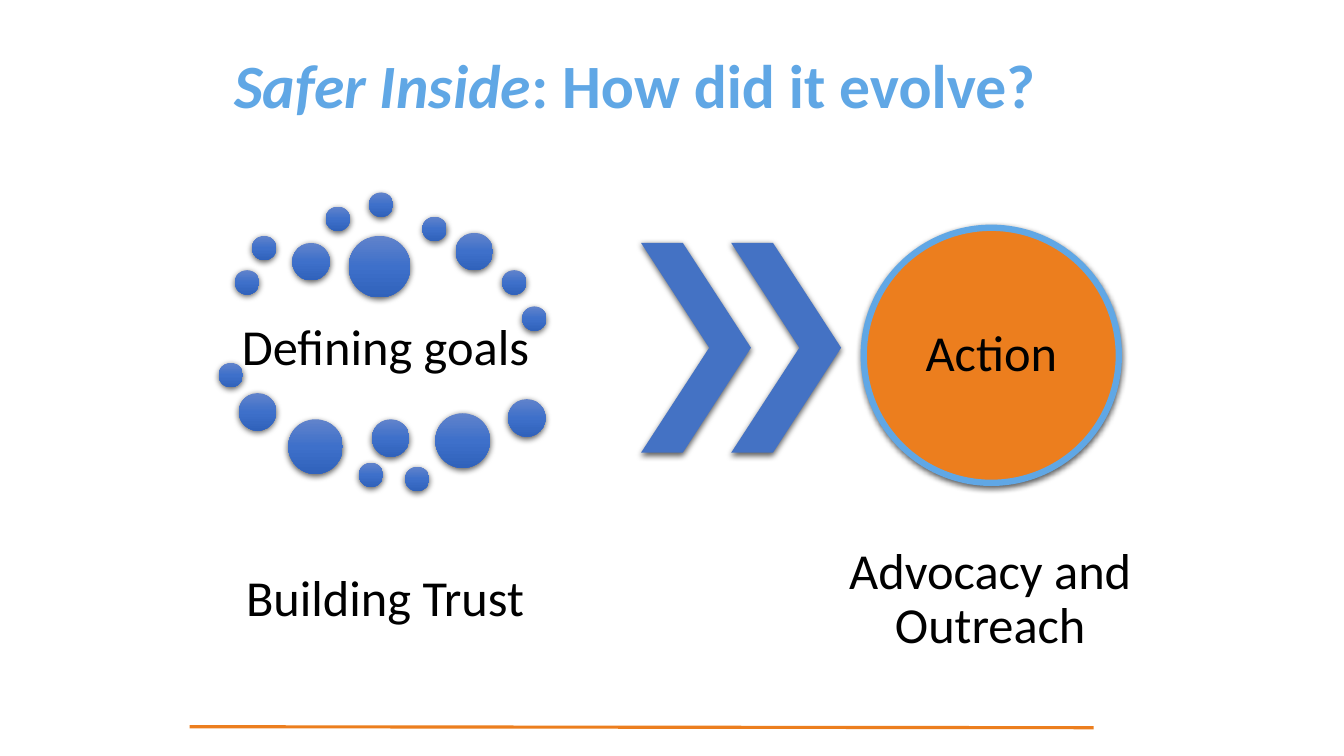
from copy import deepcopy
from dataclasses import dataclass

from lxml import etree
from pptx import Presentation
from pptx.dml.color import RGBColor
from pptx.enum.shapes import MSO_CONNECTOR, MSO_SHAPE
from pptx.enum.text import MSO_ANCHOR, PP_ALIGN
from pptx.oxml.ns import qn
from pptx.util import Pt

CHEVRON, OVAL = MSO_SHAPE.CHEVRON, MSO_SHAPE.OVAL
STRAIGHT = MSO_CONNECTOR.STRAIGHT
TOP, MIDDLE = MSO_ANCHOR.TOP, MSO_ANCHOR.MIDDLE
CENTER = PP_ALIGN.CENTER


@dataclass(frozen=True)
class Theme:
    font: str = "Calibri"
    title_size: float = 44
    label_size: float = 36
    text: str = "000000"
    sky: str = "60A7E5"
    orange: str = "EC7E1E"
    blue: str = "4472C4"
    dot_stops: tuple = ((0, "6183CB"), (0.5, "3E70CA"), (1, "3062BB"))


# Dot diameters, and the left and top of each dot
SMALL, MEDIUM, LARGE, LARGEST = 17.4, 26.8, 39, 44
DOTS = (
    (167.8, 193, SMALL), (180, 168.5, SMALL), (208.8, 173.5, MEDIUM),
    (232.6, 147.6, SMALL), (263.5, 137.5, SMALL), (301.7, 154.8, SMALL),
    (325.4, 166.3, MEDIUM), (358.6, 193, SMALL), (373, 218.9, SMALL),
    (249.1, 168.5, LARGEST), (156.2, 259.2, SMALL), (170.6, 280.8, MEDIUM),
    (205.9, 299.5, LARGE), (256.3, 330.5, SMALL), (265.7, 299.5, MEDIUM),
    (289.4, 333.4, SMALL), (311, 295.2, LARGE), (362.9, 285.1, MEDIUM),
)
CHEVRON_LEFT, CHEVRON_STEP = 457.9, 64.4


class Painter:
    def __init__(self, page, theme):
        self.page = page
        self.theme = theme

    def shape(self, kind, left, top, width, height):
        """Add an unfilled preset shape with the soft shadow of this slide."""
        shape = self.page.shapes.add_shape(
            kind, Pt(left), Pt(top), Pt(width), Pt(height))
        shape.line.fill.background()
        shape.shadow.inherit = False
        effects = shape._element.spPr.find(qn("a:effectLst"))
        shadow = etree.SubElement(
            effects, qn("a:outerShdw"), blurRad=str(Pt(4.5)),
            dist=str(Pt(1.5)), dir="5400000", algn="ctr", rotWithShape="0")
        color = etree.SubElement(shadow, qn("a:srgbClr"), val="000000")
        etree.SubElement(color, qn("a:alpha"), val="63000")
        return shape

    def dot(self, left, top, size):
        fill = self.shape(OVAL, left, top, size, size).fill
        fill.gradient()
        fill.gradient_angle = 270
        stop_list = fill.gradient_stops[0]._gs.getparent()
        stop_list.insert(1, deepcopy(stop_list[0]))
        for stop, (position, color) in zip(fill.gradient_stops, self.theme.dot_stops):
            stop.position = position
            stop.color.rgb = RGBColor.from_string(color)

    def solid(self, kind, left, top, width, height, color):
        shape = self.shape(kind, left, top, width, height)
        shape.fill.solid()
        shape.fill.fore_color.rgb = RGBColor.from_string(color)
        return shape

    def outline(self, line, color, width):
        line.color.rgb = RGBColor.from_string(color)
        line.width = Pt(width)

    def rule(self, start, end, color, width):
        rule = self.page.shapes.add_connector(
            STRAIGHT, *(Pt(value) for value in (*start, *end)))
        self.outline(rule.line, color, width)
        etree.SubElement(rule._element.spPr, qn("a:effectLst"))

    def text(self, left, top, width, height, spans, size, color,
             anchor=MIDDLE, margins=(3.6, 3.6)):
        """Add centred text; spans pair wording with font values."""
        box = self.page.shapes.add_textbox(Pt(left), Pt(top), Pt(width), Pt(height))
        side, edge = (Pt(margin) for margin in margins)
        frame_format = {
            "word_wrap": True, "vertical_anchor": anchor,
            "margin_left": side, "margin_right": side,
            "margin_top": edge, "margin_bottom": edge,
        }
        for name, value in frame_format.items():
            setattr(box.text_frame, name, value)
        para = box.text_frame.paragraphs[0]
        para.alignment = CENTER
        para.line_spacing = 0.9
        for wording, extra in spans:
            span = para.add_run()
            span.text = wording
            for name, value in {"name": self.theme.font, "size": Pt(size), **extra}.items():
                setattr(span.font, name, value)
            span.font.color.rgb = RGBColor.from_string(color)

    def label(self, wording, left, top, width, height, margins=(3.6, 3.6)):
        self.text(left, top, width, height, [(wording, {})],
                  self.theme.label_size, self.theme.text, margins=margins)


def main():
    deck = Presentation()
    deck.slide_width, deck.slide_height = Pt(960), Pt(540)
    theme = Theme()
    painter = Painter(deck.slides.add_slide(deck.slide_layouts[6]), theme)

    painter.rule((135.4, 519.1), (781.2, 519.8), theme.orange, 2.25)
    painter.label("Defining goals", 168.5, 213.8, 213.8, 70.6)
    painter.label("Building Trust", 92.2, 362.9, 365.8, 131.8)
    for left, top, size in DOTS:
        painter.dot(left, top, size)
    for index in range(2):
        left = CHEVRON_LEFT + index * CHEVRON_STEP
        chevron = painter.solid(CHEVRON, left, 173.5, 78.5, 149.8, theme.blue)
        chevron.adjustments[0] = 0.62
    circle = painter.solid(OVAL, 617, 162.7, 182.2, 182.2, theme.orange)
    painter.outline(circle.line, theme.sky, 4.5)
    painter.label("Action", 643.7, 189.4, 128.9, 128.9, margins=(0, 0))
    painter.label("Advocacy and Outreach", 600.5, 362.9, 213.8, 131.8)
    painter.text(
        69.8, 36, 767.5, 62.6,
        [("Safer Inside", {"bold": True, "italic": True}),
         (": How did it evolve?", {"bold": True})],
        theme.title_size, theme.sky, anchor=TOP, margins=(7.2, 3.6))
    deck.save("out.pptx")


if __name__ == "__main__":
    main()
